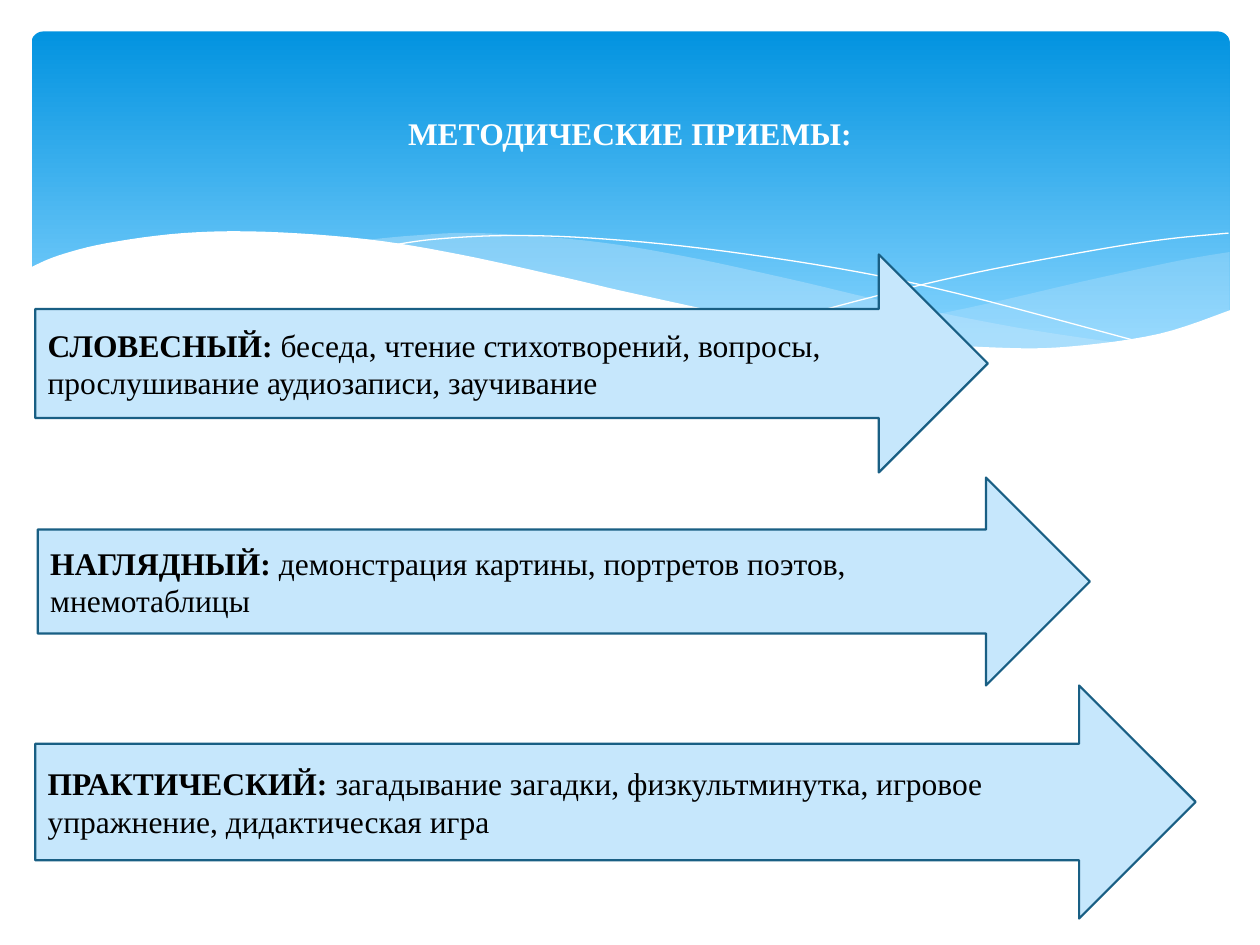
from lxml import etree
from pptx import Presentation
from pptx.dml.color import RGBColor
from pptx.enum import shapes, text
from pptx.oxml.ns import qn
from pptx.util import Inches, Pt

WHITE = RGBColor(0xFF, 0xFF, 0xFF)
BLACK = RGBColor(0x00, 0x00, 0x00)
DEEP_BLUE = RGBColor(0x02, 0x93, 0xE0)
SKY_BLUE = RGBColor(0x83, 0xD3, 0xFE)
PALE_BLUE = RGBColor(0xC6, 0xE7, 0xFC)
OUTLINE_BLUE = RGBColor(0x19, 0x5F, 0x84)
FONT = "Times New Roman"

RIGHT_WAVE_TOP = [(9.51, 1.75), (9.1, 1.82), (8.36, 1.98), (7.54, 2.17),
                  (6.81, 2.32), (6.36, 2.4)]
RIGHT_WAVE_BOTTOM = [(6.36, 2.4), (6.94, 2.47), (7.78, 2.53), (8.47, 2.49),
                     (9.03, 2.38), (9.51, 2.22)]
MIDDLE_WAVE_TOP = [(8.68, 2.48), (7.82, 2.35), (6.81, 2.15), (6.04, 1.97),
                   (5.16, 1.78), (4.4, 1.66), (3.55, 1.6), (3.03, 1.62), (2.61, 1.66)]
MIDDLE_WAVE_BOTTOM = [(2.61, 1.66), (3.37, 1.78), (4.24, 1.97), (5.41, 2.23),
                      (6.4, 2.41), (7.23, 2.51), (7.93, 2.53), (8.68, 2.48)]
FALLING_LINE = [(2.84, 1.7), (3.19, 1.65), (3.76, 1.62), (4.44, 1.64),
                (5.31, 1.72), (6.4, 1.88), (7.35, 2.08), (8.82, 2.47)]
RISING_LINE = [(5.88, 2.32), (6.7, 2.1), (7.51, 1.91), (8.41, 1.74),
               (8.99, 1.65), (9.5, 1.6)]
BOTTOM_EDGE = [(9.52, 2.21), (8.95, 2.4), (8.25, 2.5), (7.68, 2.51), (6.83, 2.45),
               (5.78, 2.29), (4.78, 2.08), (4.22, 1.95), (3.4, 1.77), (2.67, 1.65),
               (1.86, 1.59), (1.21, 1.6), (0.6, 1.68), (0.21, 1.78), (-0.02, 1.88)]
BOTTOM_CORNERS = [(-0.02, 3.04), (9.52, 3.04)]

METHODS = [
    ((0.28, 2.02, 7.56, 1.73), "СЛОВЕСНЫЙ: ",
     "беседа, чтение стихотворений, вопросы, прослушивание аудиозаписи, заучивание"),
    ((0.3, 3.79, 8.35, 1.65), "НАГЛЯДНЫЙ: ",
     "демонстрация картины, портретов поэтов, мнемотаблицы"),
    ((0.28, 5.44, 9.21, 1.85), "ПРАКТИЧЕСКИЙ: ",
     "загадывание загадки, физкультминутка, игровое упражнение, дидактическая игра"),
]


def smooth_curve(knots, steps=6):
    padded = [knots[0], *knots, knots[-1]]
    points = [knots[0]]
    for a, b, c, d in zip(padded, padded[1:], padded[2:], padded[3:]):
        for step in range(1, steps + 1):
            t = step / steps
            points.append(tuple(
                q + t * (r - p) / 2 + t**2 * (2 * p - 5 * q + 4 * r - s) / 2
                + t**3 * (3 * q - p - 3 * r + s) / 2
                for p, q, r, s in zip(a, b, c, d)))
    return points


def add_outline(slide, left, top, points, closed):
    vertices = [(Inches(x), Inches(y)) for x, y in points]
    builder = slide.shapes.build_freeform(*vertices[0])
    builder.add_line_segments(vertices[1:], close=closed)
    shape = builder.convert_to_shape(Inches(left), Inches(top))
    shape.shadow.inherit = False
    return shape


def add_wave(slide, left, top, points, color, opacity=100):
    wave = add_outline(slide, left, top, points, True)
    wave.fill.solid()
    wave.fill.fore_color.rgb = color
    wave.line.fill.background()
    if opacity < 100:
        color_element = wave.element.spPr.find(qn("a:solidFill"))[0]
        etree.SubElement(color_element, qn("a:alpha")).set("val", str(opacity * 1000))


def add_banner(slide, left, top, width, height):
    panel = slide.shapes.add_shape(shapes.MSO_SHAPE.ROUNDED_RECTANGLE, Inches(left),
                                   Inches(top), Inches(width), Inches(height))
    panel.adjustments[0] = 0.034
    panel.shadow.inherit = False
    panel.line.fill.background()
    panel.fill.gradient()
    panel.fill.gradient_angle = 270
    for stop, color, position in zip(panel.fill.gradient_stops,
                                     (DEEP_BLUE, SKY_BLUE), (0, 0.9)):
        stop.color.rgb = color
        stop.position = position

    right_wave = smooth_curve(RIGHT_WAVE_TOP) + smooth_curve(RIGHT_WAVE_BOTTOM)
    middle_wave = smooth_curve(MIDDLE_WAVE_TOP) + smooth_curve(MIDDLE_WAVE_BOTTOM)
    add_wave(slide, left, top, right_wave, PALE_BLUE, 29)
    add_wave(slide, left, top, middle_wave, PALE_BLUE, 40)
    for knots in (FALLING_LINE, RISING_LINE):
        line = add_outline(slide, left, top, smooth_curve(knots), False)
        line.fill.background()
        line.line.color.rgb = WHITE
        line.line.width = Pt(0)
    add_wave(slide, left, top, smooth_curve(BOTTOM_EDGE) + BOTTOM_CORNERS, WHITE)


def format_run(run, color, bold):
    run.font.name = FONT
    run.font.size = Pt(18)
    run.font.bold = bold
    run.font.color.rgb = color


def place_title(slide, left, top, width, height):
    title = slide.shapes.title
    title.left, title.top = Inches(left), Inches(top)
    title.width, title.height = Inches(width), Inches(height)
    title.text_frame.text = "МЕТОДИЧЕСКИЕ ПРИЕМЫ:"
    title.text_frame.vertical_anchor = text.MSO_ANCHOR.MIDDLE
    paragraph = title.text_frame.paragraphs[0]
    paragraph.alignment = text.PP_ALIGN.CENTER
    format_run(paragraph.runs[0], WHITE, True)
    slide.shapes.element.append(title.element)


def add_method_arrow(slide, left, top, width, height, name, description):
    arrow = slide.shapes.add_shape(shapes.MSO_SHAPE.RIGHT_ARROW, Inches(left),
                                   Inches(top), Inches(width), Inches(height))
    arrow.shadow.inherit = False
    arrow.fill.solid()
    arrow.fill.fore_color.rgb = PALE_BLUE
    arrow.line.color.rgb = OUTLINE_BLUE
    arrow.line.width = Pt(1.25)
    arrow.text_frame.word_wrap = True
    arrow.text_frame.vertical_anchor = text.MSO_ANCHOR.MIDDLE
    paragraph = arrow.text_frame.paragraphs[0]
    paragraph.alignment = text.PP_ALIGN.LEFT
    for words, bold in ((name, True), (description, False)):
        run = paragraph.add_run()
        run.text = words
        format_run(run, BLACK, bold)


def main():
    presentation = Presentation()
    presentation.slide_width = Inches(10)
    presentation.slide_height = Inches(7.5)
    slide = presentation.slides.add_slide(presentation.slide_layouts[5])
    add_banner(slide, 0.25, 0.25, 9.51, 2.7)
    place_title(slide, 0.5, 0.37, 9, 1.37)
    for box, name, description in METHODS:
        add_method_arrow(slide, *box, name, description)
    presentation.save("out.pptx")


if __name__ == "__main__":
    main()
